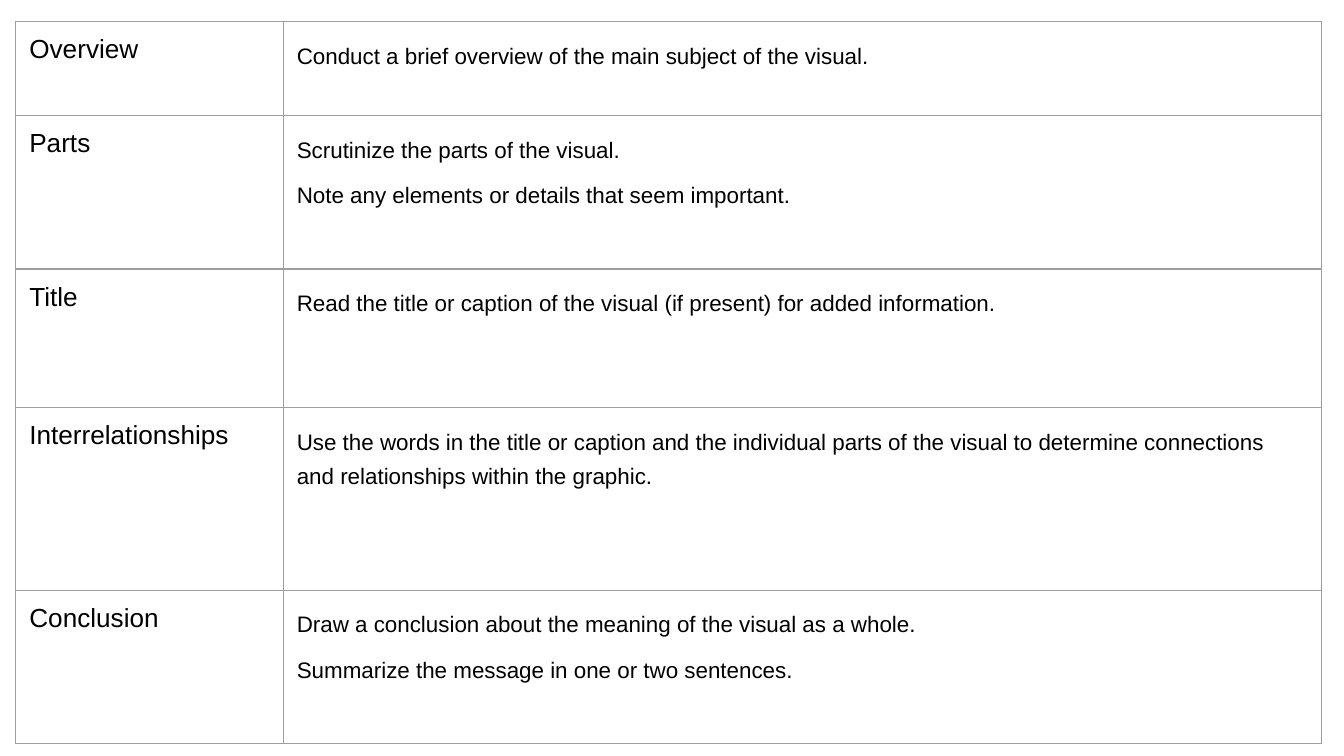
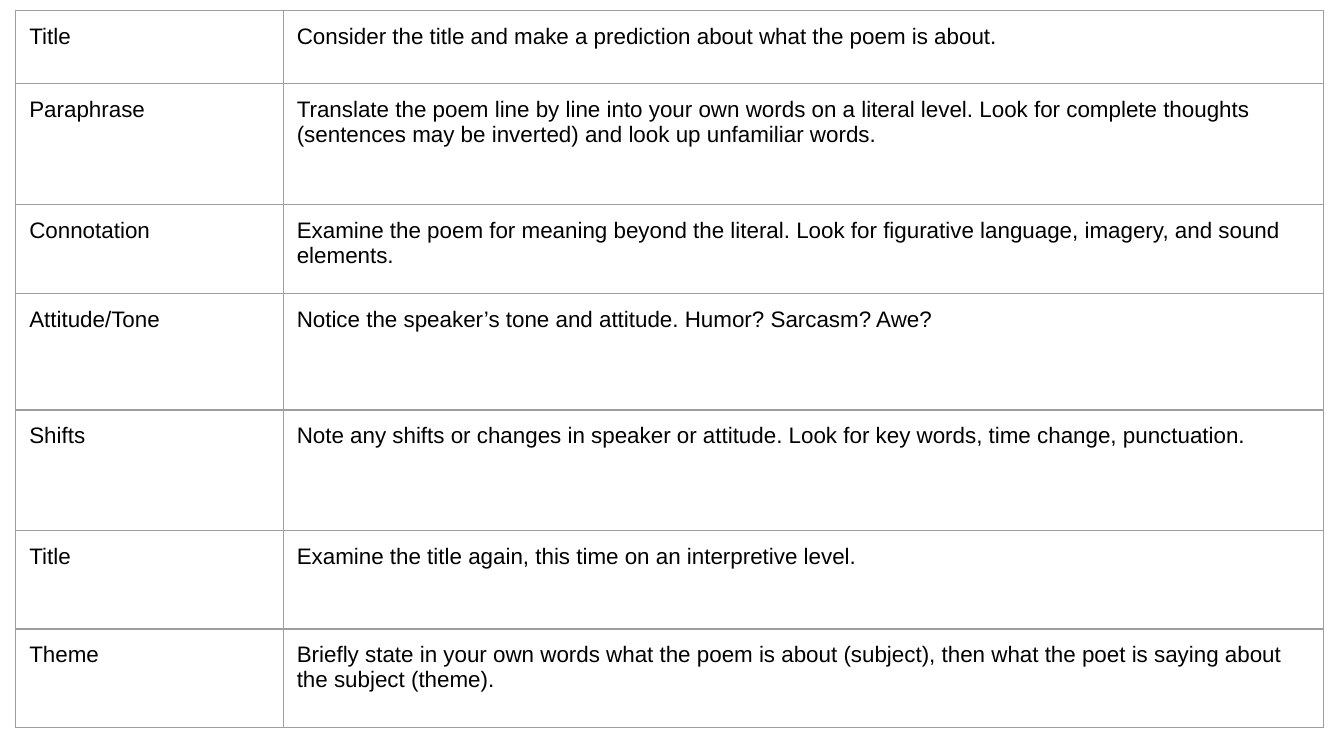
import pptx
import pptx.util
import pptx.dml.color
import pptx.oxml
import pptx.oxml.ns
from lxml import etree

Pt = pptx.util.Pt
BLACK = pptx.dml.color.RGBColor(0x00, 0x00, 0x00)
GRID_GRAY = pptx.dml.color.RGBColor(0x9E, 0x9E, 0x9E)
FONT = "Arial"
TABLE_LEFT = 8.5
LABEL_WIDTH = 143.3
CELL_MARGIN = 7.2
BORDER_WIDTH = 0.75
TEXT_SIZE = 12

VISUAL_STEPS = [
    (50.4, "Overview", ["Conduct a brief overview of the main subject of the visual."]),
    (82.2, "Parts", ["Scrutinize the parts of the visual.",
                     "Note any elements or details that seem important."]),
    (74.2, "Title", ["Read the title or caption of the visual (if present) for added information."]),
    (97.9, "Interrelationships", [
        "Use the words in the title or caption and the individual parts of the visual "
        "to determine connections and relationships within the graphic."]),
    (82.2, "Conclusion", ["Draw a conclusion about the meaning of the visual as a whole.",
                          "Summarize the message in one or two sentences."]),
]

POEM_STEPS = [
    (39.3, "Title", ["Consider the title and make a prediction about what the poem is about."]),
    (64.8, "Paraphrase", [
        "Translate the poem line by line into your own words on a literal level. Look for "
        "complete thoughts (sentences may be inverted) and look up unfamiliar words."]),
    (47.4, "Connotation", [
        "Examine the poem for meaning beyond the literal. Look for figurative language, "
        "imagery, and sound elements."]),
    (62.6, "Attitude/Tone", ["Notice the speaker’s tone and attitude. Humor? Sarcasm? Awe?"]),
    (64.6, "Shifts", [
        "Note any shifts or changes in speaker or attitude. Look for key words, "
        "time change, punctuation."]),
    (52.7, "Title", ["Examine the title again, this time on an interpretive level."]),
    (52.7, "Theme", [
        "Briefly state in your own words what the poem is about (subject), then what the "
        "poet is saying about the subject (theme)."]),
]


def set_borders(cell):
    properties = cell._tc.get_or_add_tcPr()
    for position, side in enumerate(("lnL", "lnR", "lnT", "lnB")):
        line = etree.Element(pptx.oxml.ns.qn(f"a:{side}"), w=str(Pt(BORDER_WIDTH)))
        fill = etree.SubElement(line, pptx.oxml.ns.qn("a:solidFill"))
        etree.SubElement(fill, pptx.oxml.ns.qn("a:srgbClr"), val=str(GRID_GRAY))
        properties.insert(position, line)


def fill_cell(cell, texts, size, line_spacing=None):
    cell.margin_left = cell.margin_right = Pt(CELL_MARGIN)
    cell.margin_top = cell.margin_bottom = Pt(CELL_MARGIN)
    cell.fill.background()
    set_borders(cell)
    for index, text in enumerate(texts):
        frame = cell.text_frame
        paragraph = frame.add_paragraph() if index else frame.paragraphs[0]
        paragraph.space_before = Pt(6 if index else 0)
        if line_spacing:
            paragraph.line_spacing = line_spacing
        run = paragraph.add_run()
        run.text = text
        run.font.name = FONT
        run.font.size = Pt(size)
        run.font.color.rgb = BLACK


def add_steps_slide(presentation, steps, top, detail_width, label_size, line_spacing=None):
    slide = presentation.slides.add_slide(presentation.slide_layouts[6])
    height = sum(row_height for row_height, _, _ in steps)
    table = slide.shapes.add_table(
        len(steps), 2, Pt(TABLE_LEFT), Pt(top),
        Pt(LABEL_WIDTH + detail_width), Pt(height)).table
    table.first_row = False
    table.horz_banding = False
    table.columns[0].width = Pt(LABEL_WIDTH)
    table.columns[1].width = Pt(detail_width)
    for index, (row_height, label, details) in enumerate(steps):
        table.rows[index].height = Pt(row_height)
        fill_cell(table.cell(index, 0), [label], label_size)
        fill_cell(table.cell(index, 1), details, TEXT_SIZE, line_spacing)


def main():
    presentation = pptx.Presentation()
    presentation.slide_width = Pt(720)
    presentation.slide_height = Pt(405)
    add_steps_slide(presentation, VISUAL_STEPS, top=11.5, detail_width=556,
                    label_size=14, line_spacing=1.36)
    add_steps_slide(presentation, POEM_STEPS, top=5.6, detail_width=557.2,
                    label_size=TEXT_SIZE)
    presentation.save("out.pptx")


if __name__ == "__main__":
    main()
